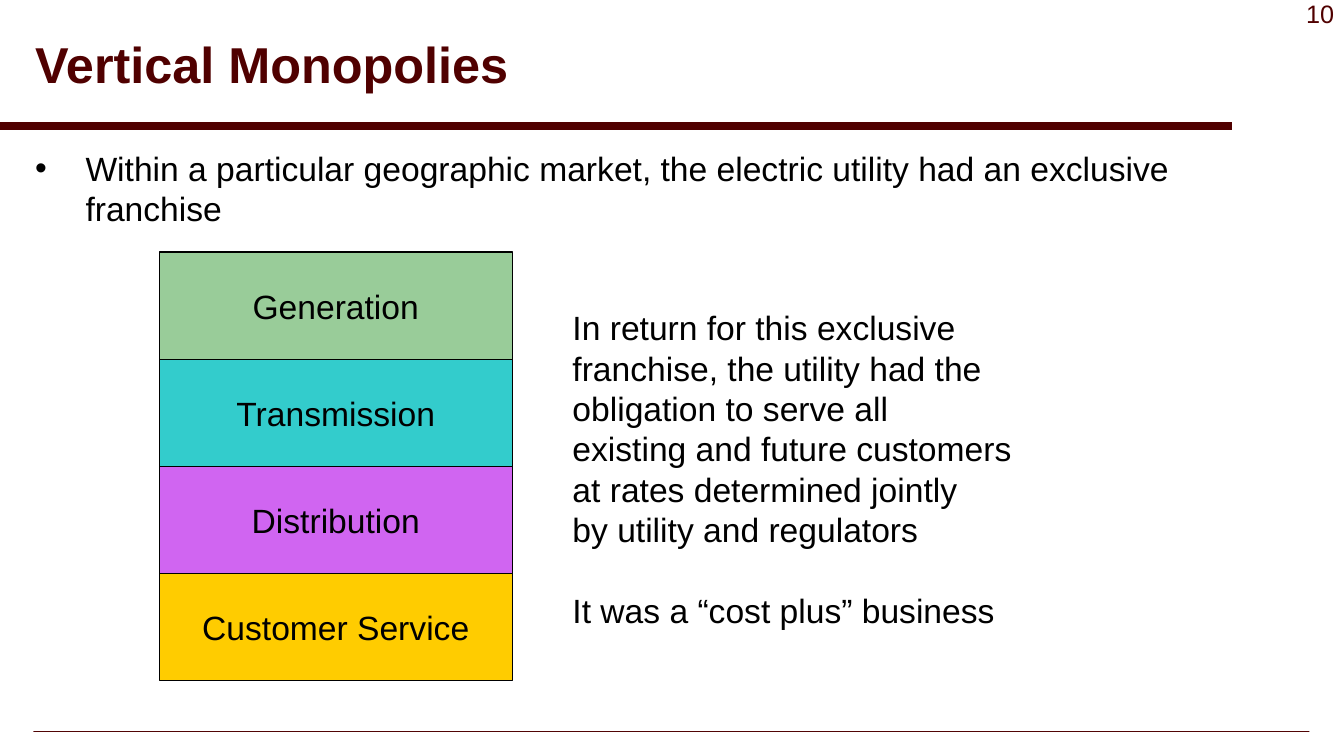
import pptx
import pptx.dml.color
import pptx.enum.shapes
import pptx.enum.text
import pptx.oxml
import pptx.oxml.ns
import pptx.util

WIDTH, HEIGHT = 13.33, 7.5
FONT = "Arial"
MAROON, BLACK, SILVER = "500000", "000000", "E3E1E1"
LEFT_MARGIN, CONTENT_WIDTH = 0.25, 11.92
STACK_LEFT, STACK_TOP, STACK_WIDTH, LAYER_HEIGHT = 1.58, 2.5, 3.5, 1.0625
LAYERS = [
    ("Generation", "99CC99"),
    ("Transmission", "33CCCC"),
    ("Distribution", "D065F1"),
    ("Customer Service", "FFCC00"),
]
OBLIGATION = [
    "In return for this exclusive",
    "franchise, the utility had the",
    "obligation to serve all",
    "existing and future customers",
    "at rates determined jointly",
    "by utility and regulators",
]
ALIGN = pptx.enum.text.PP_ALIGN
ANCHOR = pptx.enum.text.MSO_ANCHOR
RECTANGLE = pptx.enum.shapes.MSO_SHAPE.RECTANGLE


def color(hex_string):
    return pptx.dml.color.RGBColor.from_string(hex_string)


def inches(*lengths):
    return [pptx.util.Inches(length) for length in lengths]


def xml(tag, attributes="", inner=""):
    namespace = pptx.oxml.ns.nsdecls("a")
    return pptx.oxml.parse_xml(f"<a:{tag} {namespace} {attributes}>{inner}</a:{tag}>")


def add_text(p, text, size=24, hex_color=BLACK, bold=False):
    r = p.add_run()
    r.text = text
    r.font.name = FONT
    r.font.size = pptx.util.Pt(size)
    r.font.bold = bold
    r.font.color.rgb = color(hex_color)


def add_box(s, at, wrap=True, anchor=ANCHOR.TOP):
    tf = s.shapes.add_textbox(*inches(*at)).text_frame
    tf.word_wrap = wrap
    tf.vertical_anchor = anchor
    return tf


def add_rectangle(s, at):
    sp = s.shapes.add_shape(RECTANGLE, *inches(*at))
    sp.shadow.inherit = False
    return sp


def add_header_rule(s, y, width):
    line = s.shapes.add_connector(
        pptx.enum.shapes.MSO_CONNECTOR.STRAIGHT, *inches(0, y, width, y))
    line.line.color.rgb = color(MAROON)
    line.line.width = pptx.util.Pt(6)
    line._element.spPr.append(xml("effectLst"))


def add_footer_rule(s, at):
    sp = add_rectangle(s, at)
    sp.line.fill.background()
    sp.fill.gradient()
    for stop, hex_color in zip(sp.fill.gradient_stops, (MAROON, SILVER)):
        stop.color.rgb = color(hex_color)
    # Shade outward from the centre
    lin = sp._element.spPr.find(".//" + pptx.oxml.ns.qn("a:lin"))
    center = '<a:fillToRect l="50000" t="50000" r="50000" b="50000"/>'
    lin.getparent().replace(lin, xml("path", 'path="shape"', center))


def add_bullet(p, indent):
    pPr = p._p.get_or_add_pPr()
    pPr.set("marL", str(pptx.util.Inches(indent)))
    pPr.set("indent", str(-pptx.util.Inches(indent)))
    pPr.append(xml("buClr", inner=f'<a:srgbClr val="{BLACK}"/>'))
    pPr.append(xml("buFont", f'typeface="{FONT}"'))
    pPr.append(xml("buChar", 'char="•"'))


def add_layer(s, row, label, fill):
    top = STACK_TOP + row * LAYER_HEIGHT
    sp = add_rectangle(s, (STACK_LEFT, top, STACK_WIDTH, LAYER_HEIGHT))
    sp.fill.solid()
    sp.fill.fore_color.rgb = color(fill)
    sp.line.color.rgb = color(BLACK)
    sp.line.width = pptx.util.Pt(0.75)
    tf = sp.text_frame
    tf.word_wrap = False
    tf.vertical_anchor = ANCHOR.MIDDLE
    p = tf.paragraphs[0]
    p.alignment = ALIGN.CENTER
    add_text(p, label)


def main():
    prs = pptx.Presentation()
    prs.slide_width, prs.slide_height = inches(WIDTH, HEIGHT)
    s = prs.slides.add_slide(prs.slide_layouts[6])

    # Rules and page number
    add_footer_rule(s, (0.33, 7.25, 12.66, 0.01))
    add_header_rule(s, 1.25, 12.22)
    p = add_box(s, (WIDTH - 1.2, -0.07, 1.2, 0.4)).paragraphs[0]
    p.alignment = ALIGN.RIGHT
    add_text(p, "10", 18, MAROON)

    # Title
    title = add_box(s, (LEFT_MARGIN, 0.08, CONTENT_WIDTH, 1.17), anchor=ANCHOR.MIDDLE)
    p = title.paragraphs[0]
    p.line_spacing = 0.9
    add_text(p, "Vertical Monopolies", 36, MAROON, bold=True)

    # Main point
    p = add_box(s, (LEFT_MARGIN, 1.42, CONTENT_WIDTH, 1)).paragraphs[0]
    add_bullet(p, 0.5)
    add_text(p, "Within a particular geographic market, "
                "the electric utility had an exclusive franchise")

    # Stack of utility functions
    for row, (label, fill) in enumerate(LAYERS):
        add_layer(s, row, label, fill)

    # Terms of the franchise
    tf = add_box(s, (5.58, 3, 4.6, 3.33), wrap=False)
    add_text(tf.paragraphs[0], OBLIGATION[0])
    for text in OBLIGATION[1:]:
        add_text(tf.add_paragraph(), text)
    p = tf.add_paragraph()
    p.space_before = pptx.util.Pt(28.8)
    add_text(p, "It was a “cost plus” business")

    prs.save("out.pptx")


if __name__ == "__main__":
    main()
